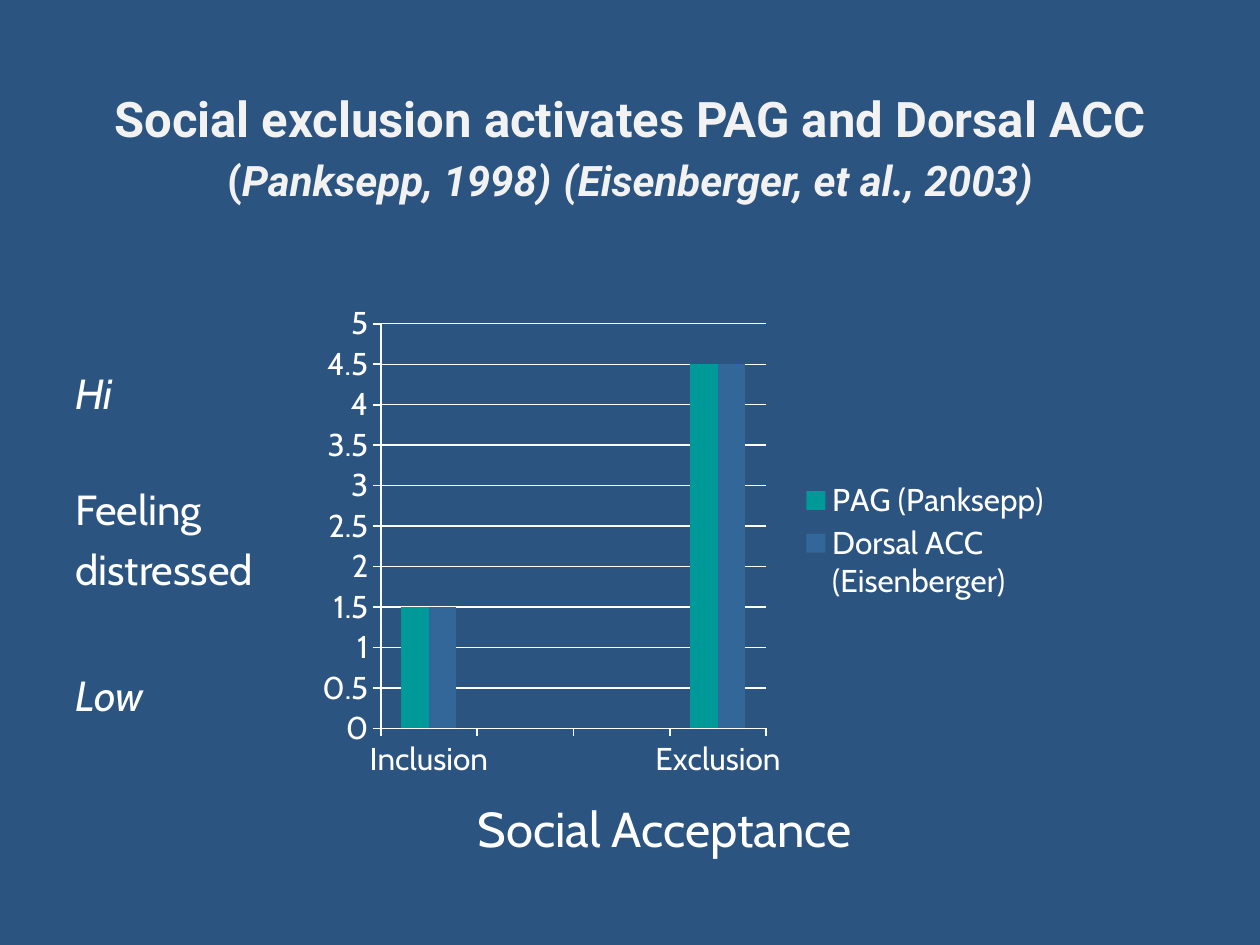
import pptx
import pptx.chart.data
import pptx.dml.color
import pptx.enum.chart
import pptx.enum.text
import pptx.util
from lxml import etree
from pptx.util import Cm, Pt

COLORS = {
    "background": "2B5481",
    "title": "F2F2F2",
    "text": "FFFFFF",
    "pag": "009999",
    "dorsal": "336699",
}
TITLE_FONT = "Roboto"
BODY_FONT = "Cabin"


def color(name):
    return pptx.dml.color.RGBColor.from_string(COLORS[name])


def add_text_box(slide, left, top, width, height):
    """Add an empty wrapping text box without margins."""
    shape = slide.shapes.add_textbox(Cm(left), Cm(top), Cm(width), Cm(height))
    frame = shape.text_frame
    frame.word_wrap = True
    frame.margin_left = frame.margin_right = 0
    frame.margin_top = frame.margin_bottom = 0
    return frame


def add_run(paragraph, text, size, font=BODY_FONT, color_name="text", bold=False, italic=False):
    run = paragraph.add_run()
    run.text = text
    run.font.name = font
    run.font.size = Pt(size)
    run.font.bold = bold
    run.font.italic = italic
    run.font.color.rgb = color(color_name)


def add_title(slide):
    frame = add_text_box(slide, 1.52, 1.07, 22.36, 3.81)
    frame.vertical_anchor = pptx.enum.text.MSO_ANCHOR.MIDDLE
    paragraph = frame.paragraphs[0]
    paragraph.alignment = pptx.enum.text.PP_ALIGN.CENTER
    for text, size, italic in (
        ("Social exclusion activates PAG and Dorsal ACC ", 28, False),
        ("(", 24, False),
        ("Panksepp, 1998)", 24, True),
        (" ", 28, False),
        ("(Eisenberger, et al., 2003)", 24, True),
    ):
        add_run(paragraph, text, size, TITLE_FONT, "title", True, italic)


def add_distress_scale(slide):
    """Label the vertical scale from high to low."""
    frame = add_text_box(slide, 1.52, 7.4, 4.5, 7.4)
    for index, (text, space_before, italic) in enumerate((
        ("Hi", 0, True),
        ("Feeling", 38, False),
        ("distressed", 5, False),
        ("Low", 43.5, True),
    )):
        paragraph = frame.add_paragraph() if index else frame.paragraphs[0]
        paragraph.space_before = Pt(space_before)
        add_run(paragraph, text, 24, italic=italic)


def set_layout(element, x, y, width, height, inner=False):
    """Place a plot area or legend by fractions of the chart."""
    namespace = "{http://schemas.openxmlformats.org/drawingml/2006/chart}"
    for old_layout in element.findall(namespace + "layout"):
        element.remove(old_layout)
    layout = etree.Element(namespace + "layout")
    manual = etree.SubElement(layout, namespace + "manualLayout")
    settings = [("layoutTarget", "inner")] if inner else []
    settings += [("xMode", "edge"), ("yMode", "edge"),
                 ("x", x), ("y", y), ("w", width), ("h", height)]
    for tag, value in settings:
        etree.SubElement(manual, namespace + tag).set("val", str(value))
    position = element.find(namespace + "legendPos")
    if position is None:
        element.insert(0, layout)
    else:
        position.addnext(layout)


def style_axis(axis):
    axis.major_tick_mark = pptx.enum.chart.XL_TICK_MARK.OUTSIDE
    axis.minor_tick_mark = pptx.enum.chart.XL_TICK_MARK.NONE
    axis.format.line.color.rgb = color("text")
    axis.format.line.width = Pt(1)


def add_activation_chart(slide):
    data = pptx.chart.data.CategoryChartData()
    data.categories = ["Inclusion", "", "", "Exclusion"]
    values = (1.5, None, None, 4.5)
    data.add_series("PAG (Panksepp)", values)
    data.add_series("Dorsal ACC (Eisenberger)", values)
    chart = slide.shapes.add_chart(
        pptx.enum.chart.XL_CHART_TYPE.COLUMN_CLUSTERED,
        Cm(6.15), Cm(5.93), Cm(15.24), Cm(9.95), data,
    ).chart
    chart.has_title = False
    chart.font.name = BODY_FONT
    chart.font.size = Pt(18)
    chart.font.color.rgb = color("text")

    plot = chart.plots[0]
    plot.vary_by_categories = False
    plot.gap_width = 150
    plot.overlap = 0
    for series, name in zip(plot.series, ("pag", "dorsal")):
        series.format.fill.solid()
        series.format.fill.fore_color.rgb = color(name)

    style_axis(chart.category_axis)
    value_axis = chart.value_axis
    style_axis(value_axis)
    value_axis.minimum_scale = 0
    value_axis.maximum_scale = 5
    value_axis.major_unit = 0.5
    value_axis.has_major_gridlines = True
    value_axis.major_gridlines.format.line.color.rgb = color("text")
    value_axis.major_gridlines.format.line.width = Pt(0.75)

    chart.has_legend = True
    chart.legend.position = pptx.enum.chart.XL_LEGEND_POSITION.RIGHT
    chart.legend.include_in_layout = False
    plot_area = chart.element.chart.plotArea
    set_layout(plot_area, 0.1, 0.06, 0.51, 0.82, inner=True)
    set_layout(chart.legend._element, 0.65, 0.37, 0.34, 0.26)


def add_axis_caption(slide):
    frame = add_text_box(slide, 9.63, 16.1, 9, 1.3)
    add_run(frame.paragraphs[0], "Social Acceptance", 28)


def main():
    presentation = pptx.Presentation()
    presentation.slide_width = Cm(25.4)
    presentation.slide_height = Cm(19.05)
    slide = presentation.slides.add_slide(presentation.slide_layouts[6])
    slide.background.fill.solid()
    slide.background.fill.fore_color.rgb = color("background")
    add_title(slide)
    add_distress_scale(slide)
    add_activation_chart(slide)
    add_axis_caption(slide)
    presentation.save("out.pptx")


if __name__ == "__main__":
    main()
